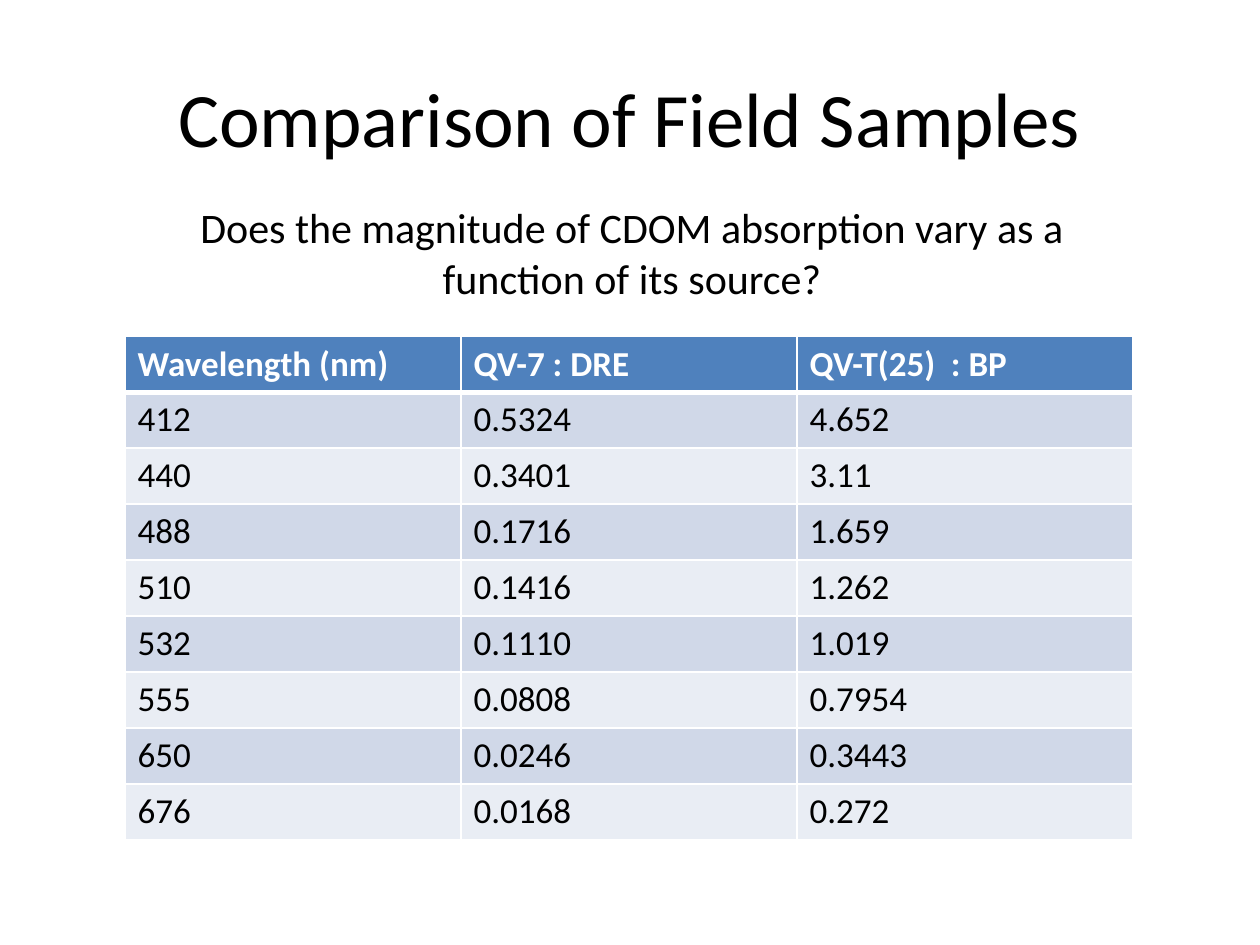
from dataclasses import dataclass

from lxml import etree
from pptx import Presentation
from pptx import util as u
from pptx.dml.color import RGBColor
from pptx.enum import text
from pptx.oxml import ns


@dataclass(frozen=True)
class Theme:
    font: str = "Calibri"
    ink: str = "000000"
    paper: str = "FFFFFF"
    header: str = "4F81BD"
    bands: tuple = ("D0D8E8", "E9EDF4")
    title_size: int = 44
    question_size: int = 24
    table_size: int = 20
    rule: float = 1
    header_rule: float = 3


class SlideBuilder:
    """Draw styled text and tables on the current slide."""

    def __init__(self, page, theme):
        self.page = page
        self.theme = theme

    def format_text(self, frame, size, color, bold=False):
        for para in frame.paragraphs:
            for span in para.runs:
                span.font.name = self.theme.font
                span.font.size = u.Pt(size)
                span.font.bold = bold
                span.font.color.rgb = RGBColor.from_string(color)

    def add_text(self, words, left, top, width, height, size,
                 anchor=text.MSO_ANCHOR.TOP):
        box = self.page.shapes.add_textbox(
            u.Cm(left), u.Cm(top), u.Cm(width), u.Cm(height))
        frame = box.text_frame
        frame.word_wrap = True
        frame.vertical_anchor = anchor
        frame.text = words
        frame.paragraphs[0].alignment = text.PP_ALIGN.CENTER
        self.format_text(frame, size, self.theme.ink)

    def add_border(self, cell, side, points):
        properties = cell._tc.get_or_add_tcPr()
        line = etree.SubElement(properties, ns.qn(f"a:ln{side}"), w=str(u.Pt(points)))
        fill = etree.SubElement(line, ns.qn("a:solidFill"))
        etree.SubElement(fill, ns.qn("a:srgbClr"), val=self.theme.paper)

    def style_cell(self, cell, row):
        theme = self.theme
        is_header = row == 0
        for side in "LRTB":
            below_header = (row, side) in ((0, "B"), (1, "T"))
            self.add_border(cell, side, theme.header_rule if below_header else theme.rule)
        color = theme.header if is_header else theme.bands[(row - 1) % 2]
        cell.fill.solid()
        cell.fill.fore_color.rgb = RGBColor.from_string(color)
        self.format_text(cell.text_frame, theme.table_size,
                         theme.paper if is_header else theme.ink, is_header)

    def add_table(self, rows, left, top, width, height):
        table = self.page.shapes.add_table(
            len(rows), len(rows[0]),
            u.Cm(left), u.Cm(top), u.Cm(width), u.Cm(height)).table
        for row, values in enumerate(rows):
            for column, value in enumerate(values):
                cell = table.cell(row, column)
                cell.text_frame.text = value
                self.style_cell(cell, row)


SAMPLES = [
    ("Wavelength (nm)", "QV-7 : DRE", "QV-T(25)  : BP"),
    ("412", "0.5324", "4.652"),
    ("440", "0.3401", "3.11"),
    ("488", "0.1716", "1.659"),
    ("510", "0.1416", "1.262"),
    ("532", "0.1110", "1.019"),
    ("555", "0.0808", "0.7954"),
    ("650", "0.0246", "0.3443"),
    ("676", "0.0168", "0.272"),
]


def main():
    deck = Presentation()
    deck.slide_width, deck.slide_height = u.Cm(25.4), u.Cm(19.05)
    theme = Theme()
    builder = SlideBuilder(deck.slides.add_slide(deck.slide_layouts[6]), theme)
    builder.add_text("Comparison of Field Samples", 1.27, 0.76, 22.86, 3.18,
                     theme.title_size, text.MSO_ANCHOR.MIDDLE)
    builder.add_table(SAMPLES, 2.52, 6.78, 20.32, 10.16)
    builder.add_text(
        "Does the magnitude of CDOM absorption vary as a function of its source?",
        3.28, 3.94, 18.92, 2.31, theme.question_size)
    deck.save("out.pptx")


if __name__ == "__main__":
    main()
